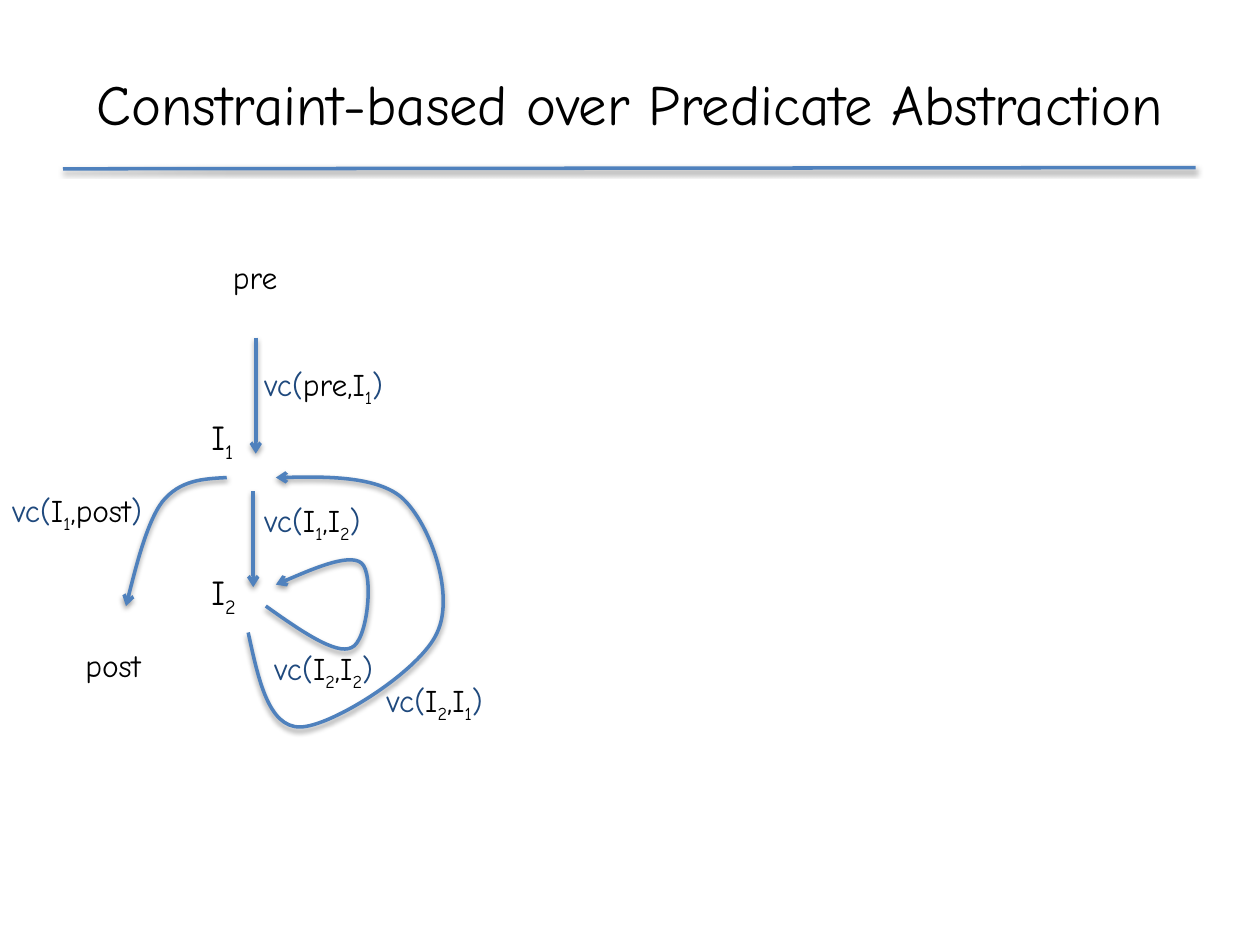
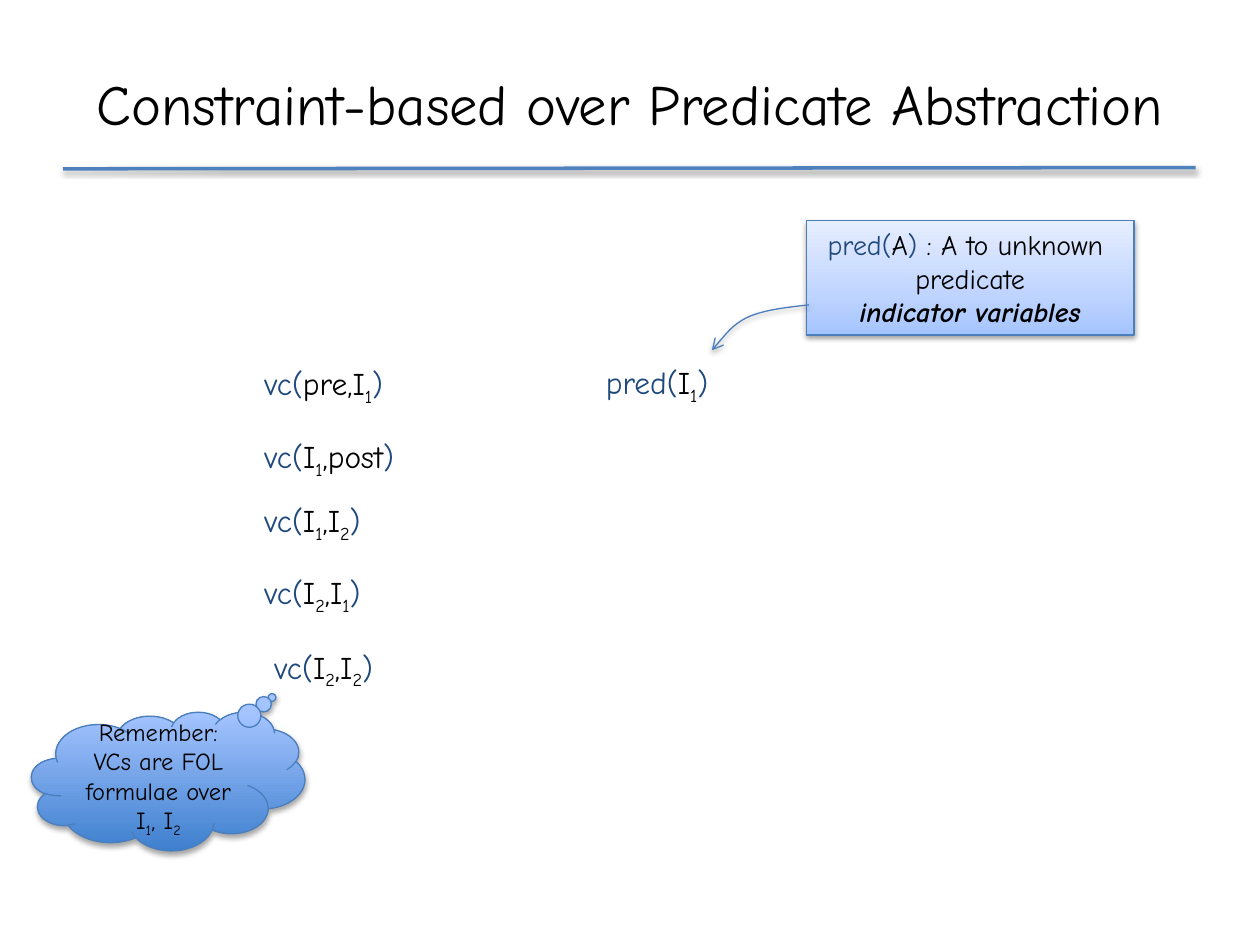
"""Build two slides on constraint-based reasoning over predicate abstraction."""
from lxml.etree import SubElement
from pptx import Presentation
from pptx.dml.color import RGBColor
from pptx.enum.shapes import MSO_CONNECTOR as Connector, MSO_SHAPE as Preset
from pptx.enum.text import MSO_ANCHOR as Anchor, MSO_AUTO_SIZE as AutoSize, PP_ALIGN as Align
from pptx.oxml import parse_xml
from pptx.oxml.ns import nsdecls, qn
from pptx.util import Pt

PX = 9144
FONT = "Comic Neue"
BLACK = RGBColor(0x00, 0x00, 0x00)
NAVY = RGBColor(0x1F, 0x49, 0x7D)
BLUE = RGBColor(0x4F, 0x81, 0xBD)
EDGE = RGBColor(0x4B, 0x7E, 0xBC)
ICE = RGBColor(0xE6, 0xEE, 0xFF)
PALE = RGBColor(0xBF, 0xD4, 0xFF)
SKY = RGBColor(0xA4, 0xC4, 0xFF)
DEEP = RGBColor(0x3F, 0x80, 0xCE)

BOLD_LINE = {"color": BLUE, "width": 2}
THIN_LINE = {"color": EDGE, "width": 0.75}
PLAIN = {"color": BLACK}
ACCENT = {"color": NAVY}
STRONG = {"color": BLACK, "bold": True, "italic": True}


def formula(text, style=PLAIN):
    """Split text into spans, lowering the one character after each underscore."""
    first, *rest = text.split("_")
    spans = [(first, style, False)]
    for part in rest:
        spans += [(part[0], style, True), (part[1:], style, False)]
    return [span for span in spans if span[0]]


def call(name, argument):
    """Return the spans of a function call with a coloured name and brackets."""
    return formula(name + "(", ACCENT) + formula(argument) + formula(")", ACCENT)


TITLE = "Constraint-based over Predicate Abstraction"
TITLE_AREA = (50, 30, 900, 103)
TITLE_RULE = ((50, 134), (949, 133))

FLOW_ARROWS = [((203, 268), (203, 360)), ((201, 390), (201, 466))]
FLOW_CURVES = [
    [(211, 481), (239, 501), (267, 520), (279, 514), (292, 509), (297, 455), (287, 447),
     (277, 438), (219, 464), (219, 464)],
    [(197, 502), (205, 539), (213, 577), (238, 577), (263, 577), (334, 532), (347, 502),
     (361, 472), (342, 417), (320, 396), (299, 376), (219, 379), (219, 379)],
    [(180, 379), (161, 380), (143, 381), (129, 398), (116, 415), (100, 481), (100, 481)],
]
FLOW_STATES = [("post", (58, 508, 75, 40)), ("pre", (175, 200, 75, 40))]
FLOW_INVARIANTS = [("I_1", (158, 325, 44, 44)), ("I_2", (158, 448, 47, 44))]
FLOW_CONDITIONS = [
    ("pre,I_1", (200, 285, 133, 40)),
    ("I_1,post", (0, 385, 150, 40)),
    ("I_1,I_2", (200, 393, 133, 40)),
    ("I_2,I_2", (208, 510, 133, 40)),
    ("I_2,I_1", (297, 536, 133, 40)),
]

LISTED_CONDITIONS = [
    ("pre,I_1", (200, 284, 133, 40)),
    ("I_1,post", (200, 342, 142, 40)),
    ("I_1,I_2", (200, 393, 133, 40)),
    ("I_2,I_2", (208, 509, 133, 40)),
    ("I_2,I_1", (200, 450, 133, 40)),
]
PREDICATE_AREA = (471, 283, 353, 40)
LEGEND_AREA = (640, 175, 260, 91)
LEGEND_FILL = [(0, SKY), (35, PALE), (100, ICE)]
LEGEND = [
    call("pred", "A") + formula(" : A to unknown "),
    formula("predicate"),
    formula("indicator variables", STRONG),
]
LEGEND_CURVE = [(642, 242), (624, 244), (606, 246), (593, 252), (581, 258), (565, 278), (565, 278)]
CLOUD_AREA = (25, 565, 217, 110)
CLOUD_FILL = [(0, DEEP), (100, SKY)]
CLOUD_TAIL = (0.38, -0.604)
REMINDER = [formula("Remember: VCs are FOL formulae over I_1, I_2")]


def emu(lengths):
    """Turn px lengths into EMU."""
    return [length * PX for length in lengths]


def write(box, paragraphs, size, align=Align.LEFT, **frame_format):
    """Fill a box with paragraphs of formatted spans."""
    frame = box.text_frame
    for name, value in frame_format.items():
        setattr(frame, name, value)
    for index, spans in enumerate(paragraphs):
        para = frame.add_paragraph() if index else frame.paragraphs[0]
        para.alignment = align
        for text, style, lowered in spans:
            span = para.add_run()
            span.text = text
            span.font.color.rgb = style["color"]
            values = {"name": FONT, "size": Pt(size), "bold": style.get("bold"),
                      "italic": style.get("italic")}
            for name, value in values.items():
                setattr(span.font, name, value)
            if lowered:
                span.font._element.set("baseline", "-25000")


def add_label(page, spans, area, size=18, wrap=True):
    """Add a text box that grows with its text."""
    box = page.shapes.add_textbox(*emu(area))
    write(box, [spans], size, word_wrap=wrap, auto_size=AutoSize.SHAPE_TO_FIT_TEXT)


def add_conditions(page, conditions):
    """Add one label for each verification condition."""
    for argument, area in conditions:
        add_label(page, call("vc", argument), area)


def finish(shape, line, arrow=False, opacity=38, distance=20000):
    """Set the outline, the arrowhead and the soft shadow of a shape."""
    shape.line.color.rgb = line["color"]
    shape.line.width = Pt(line["width"])
    if arrow:
        SubElement(shape.line._get_or_add_ln(), qn("a:tailEnd"), type="arrow")
    shape.element.spPr.append(parse_xml(
        f'<a:effectLst {nsdecls("a")}><a:outerShdw blurRad="40000" dist="{distance}" '
        f'dir="5400000" rotWithShape="0"><a:srgbClr val="{BLACK}">'
        f'<a:alpha val="{opacity * 1000}"/></a:srgbClr></a:outerShdw></a:effectLst>'))


def add_straight(page, start, end, arrow=True):
    """Add a straight line between two points."""
    line = page.shapes.add_connector(Connector.STRAIGHT, *emu(start + end))
    finish(line, BOLD_LINE, arrow)
    return line


def add_curve(page, points, line):
    """Add an arrow along Bézier curves: a start, then three points for each curve."""
    builder = page.shapes.build_freeform(*points[0], scale=PX)
    builder.add_line_segments(points[1:], close=False)
    shape = builder.convert_to_shape()
    outline = next(shape.element.iter(qn("a:path")))
    steps = outline.findall(qn("a:lnTo"))
    for index in range(0, len(steps), 3):
        curve = SubElement(outline, qn("a:cubicBezTo"))
        for step in steps[index:index + 3]:
            curve.append(step[0])
            outline.remove(step)
    shape.fill.background()
    finish(shape, line, arrow=True)


def add_panel(page, preset, area, stops, **effect):
    """Add a preset shape with an upward gradient."""
    shape = page.shapes.add_shape(preset, *emu(area))
    marks = "".join(f'<a:gs pos="{place * 1000}"><a:srgbClr val="{color}"/></a:gs>'
                    for place, color in stops)
    shape.element.spPr.append(parse_xml(
        f'<a:gradFill {nsdecls("a")} rotWithShape="1"><a:gsLst>{marks}</a:gsLst>'
        '<a:lin ang="16200000" scaled="0"/></a:gradFill>'))
    finish(shape, THIN_LINE, **effect)
    return shape


def add_page(deck, layout):
    """Add a slide with the shared title."""
    page = deck.slides.add_slide(layout)
    title = page.shapes.title
    title.left, title.top, title.width, title.height = emu(TITLE_AREA)
    write(title, [formula(TITLE)], 32.4, Align.CENTER, word_wrap=True,
          auto_size=AutoSize.NONE, vertical_anchor=Anchor.MIDDLE)
    return page


def add_title_rule(page):
    """Draw the rule under the title and move it to the layout of the slide."""
    rule = add_straight(page, *TITLE_RULE, arrow=False)
    rule.element.nvCxnSpPr.cNvPr.set("id", "99")
    page.slide_layout.shapes.element.append(rule.element)


def draw_flow(page):
    """Draw the control flow between the pre- and postcondition."""
    for start, end in FLOW_ARROWS:
        add_straight(page, start, end)
    for points in FLOW_CURVES:
        add_curve(page, points, BOLD_LINE)
    for name, area in FLOW_STATES:
        add_label(page, formula(name), area)
    for name, area in FLOW_INVARIANTS:
        add_label(page, formula(name), area, size=20, wrap=False)
    add_conditions(page, FLOW_CONDITIONS)


def draw_predicates(page):
    """List the conditions and explain the predicate mapping."""
    add_conditions(page, LISTED_CONDITIONS)
    add_label(page, call("pred", "I_1"), PREDICATE_AREA)
    legend = add_panel(page, Preset.RECTANGLE, LEGEND_AREA, LEGEND_FILL)
    write(legend, LEGEND, 16, Align.CENTER, word_wrap=False,
          auto_size=AutoSize.SHAPE_TO_FIT_TEXT, vertical_anchor=Anchor.MIDDLE)
    add_curve(page, LEGEND_CURVE, THIN_LINE)
    cloud = add_panel(page, Preset.CLOUD_CALLOUT, CLOUD_AREA, CLOUD_FILL,
                      opacity=35, distance=23000)
    for index, value in enumerate(CLOUD_TAIL):
        cloud.adjustments[index] = value
    write(cloud, REMINDER, 14, Align.CENTER, word_wrap=True, vertical_anchor=Anchor.MIDDLE)


def main():
    """Build and save the deck."""
    deck = Presentation()
    deck.slide_width, deck.slide_height = emu((1000, 750))
    layout = deck.slide_layouts.get_by_name("Title Only")
    flow_page, predicate_page = [add_page(deck, layout) for _ in range(2)]
    add_title_rule(flow_page)
    draw_flow(flow_page)
    draw_predicates(predicate_page)
    deck.save("out.pptx")


if __name__ == "__main__":
    main()
